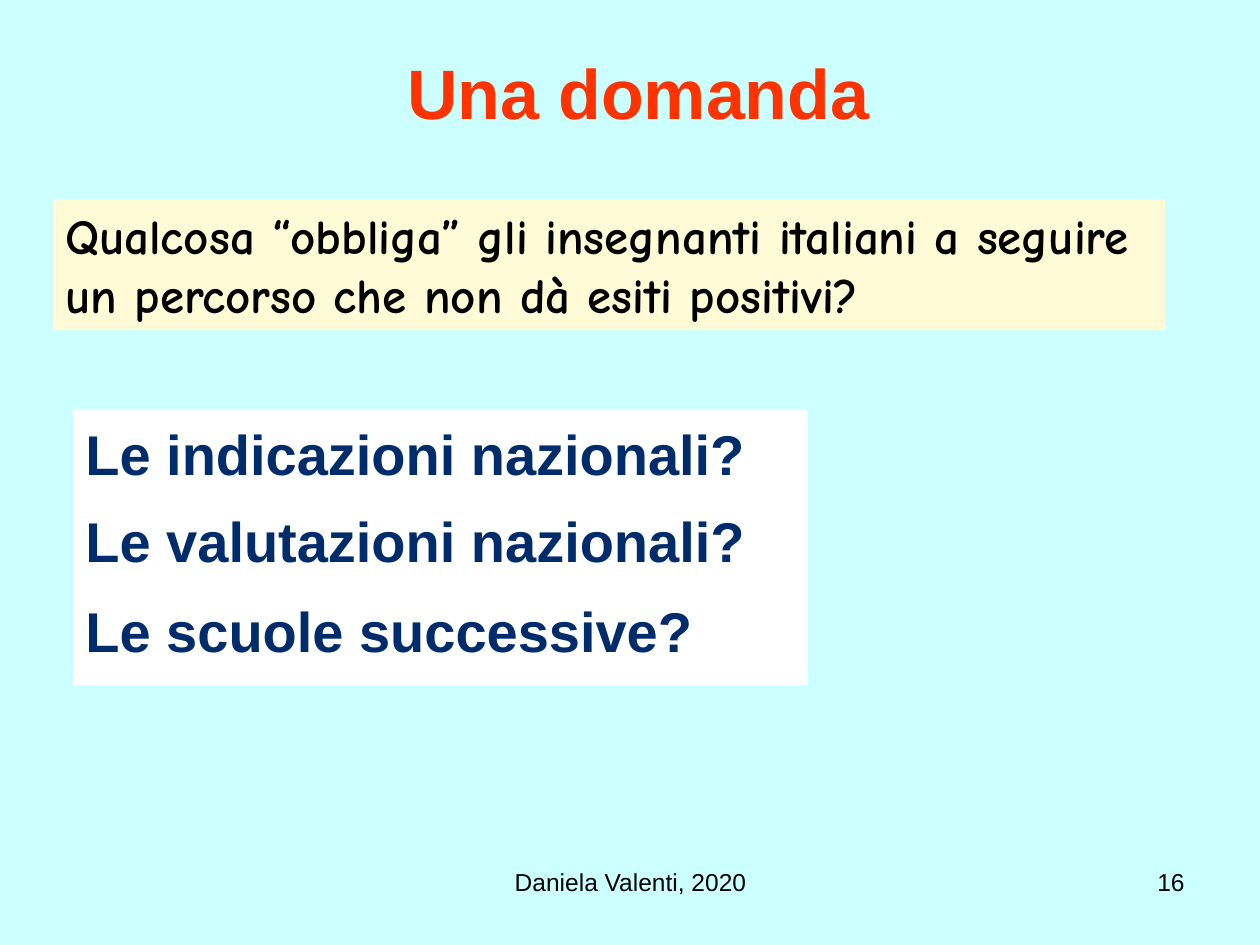
from dataclasses import dataclass

from pptx import Presentation
from pptx.dml.color import RGBColor
from pptx.enum import shapes, text
from pptx.util import Inches, Pt


@dataclass(frozen=True)
class Theme:
    background: str = "CCFFFF"
    title: str = "FF3300"
    question_fill: str = "FFFBD6"
    answers_fill: str = "FFFFFF"
    answers: str = "002C6C"
    body: str = "000000"
    font: str = "Arial"
    question_font: str = "Comic Neue"
    title_size: int = 40
    answers_size: int = 32
    question_size: int = 28
    footer_size: int = 14


THEME = Theme()
ALIGN = text.PP_ALIGN
ANCHOR = text.MSO_ANCHOR


def write(shape, lines, size, color, font=THEME.font, bold=False,
          align=ALIGN.LEFT, anchor=ANCHOR.TOP):
    """Fill a shape with (line, points of space before) pairs in one style."""
    frame = shape.text_frame
    frame.word_wrap = True
    frame.vertical_anchor = anchor
    for index, (line, space) in enumerate(lines):
        paragraph = frame.add_paragraph() if index else frame.paragraphs[0]
        paragraph.text = line
        paragraph.alignment = align
        paragraph.space_before = Pt(space)
        paragraph.font.name = font
        paragraph.font.size = Pt(size)
        paragraph.font.bold = bold
        paragraph.font.color.rgb = RGBColor.from_string(color)


def add_label(slide, box, line, size, color, **style):
    shape = slide.shapes.add_textbox(*map(Inches, box))
    write(shape, [(line, 0)], size, color, **style)


def add_panel(slide, box, fill, lines, size, color, **style):
    shape = slide.shapes.add_shape(shapes.MSO_SHAPE.RECTANGLE, *map(Inches, box))
    shape.shadow.inherit = False
    shape.fill.solid()
    shape.fill.fore_color.rgb = RGBColor.from_string(fill)
    shape.line.fill.background()
    write(shape, lines, size, color, bold=True, **style)
    return shape


def main():
    presentation = Presentation()
    presentation.slide_width, presentation.slide_height = Inches(10), Inches(7.5)
    slide = presentation.slides.add_slide(presentation.slide_layouts[6])
    slide.background.fill.solid()
    slide.background.fill.fore_color.rgb = RGBColor.from_string(THEME.background)

    add_label(slide, (0.42, 0.33, 9.29, 0.8), "Una domanda", THEME.title_size,
              THEME.title, bold=True, align=ALIGN.CENTER, anchor=ANCHOR.MIDDLE)

    question = ("Qualcosa “obbliga” gli insegnanti italiani a seguire "
                "un percorso che non dà esiti positivi?")
    add_panel(slide, (0.42, 1.58, 8.83, 1.04), THEME.question_fill, [(question, 0)],
              THEME.question_size, THEME.body, font=THEME.question_font)

    answers = [("Le indicazioni nazionali?", 0),
               ("Le valutazioni nazionali?", 11),
               ("Le scuole successive?", 13.5)]
    panel = add_panel(slide, (0.58, 3.25, 5.83, 2.19), THEME.answers_fill, answers,
                      THEME.answers_size, THEME.answers)
    panel.text_frame.margin_top = Inches(0.08)

    add_label(slide, (3.42, 6.83, 3.17, 0.52), "Daniela Valenti, 2020",
              THEME.footer_size, THEME.body, align=ALIGN.CENTER)
    add_label(slide, (7.17, 6.83, 2.33, 0.52), "16",
              THEME.footer_size, THEME.body, align=ALIGN.RIGHT)

    presentation.save("out.pptx")


if __name__ == "__main__":
    main()
